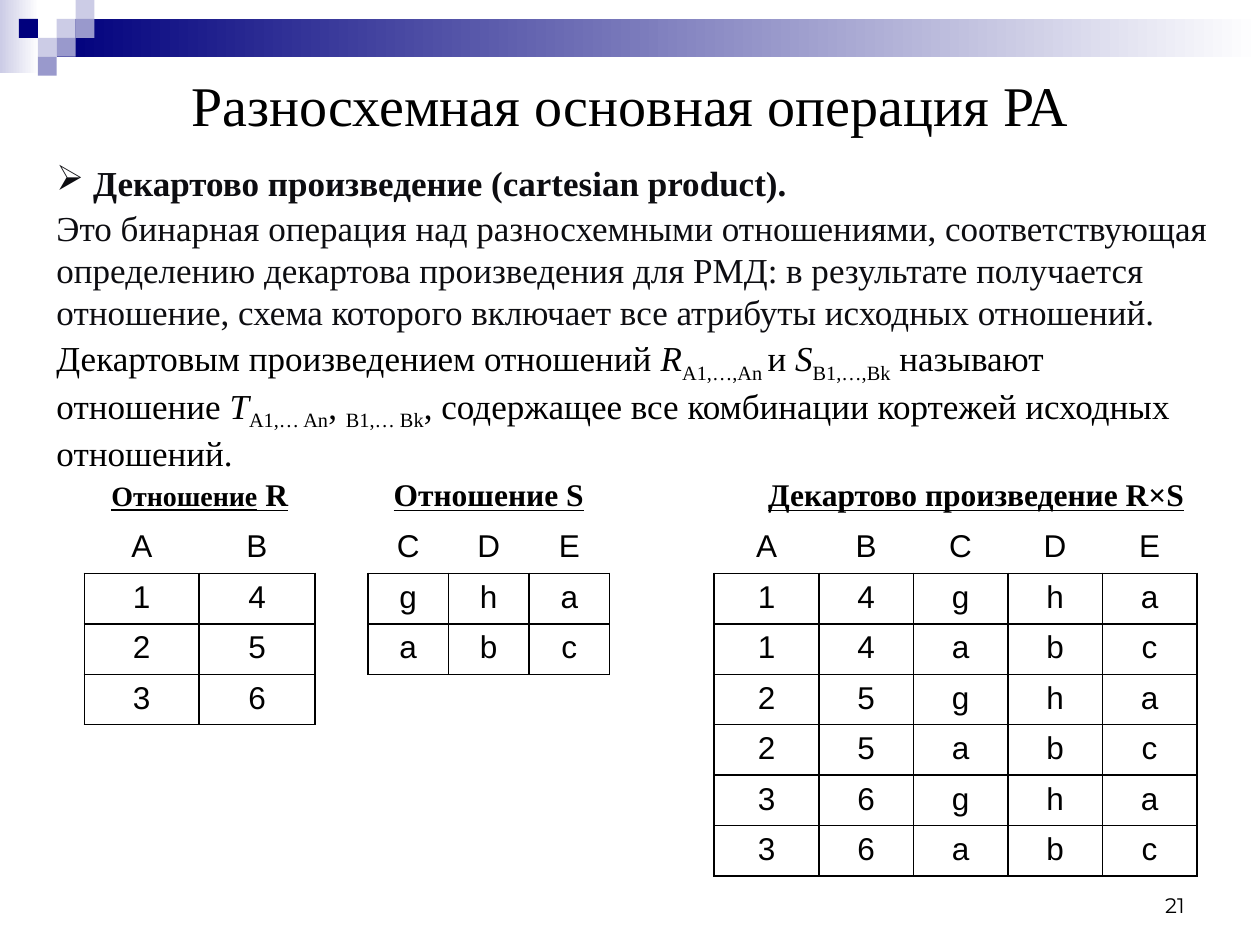
"""Builds the slide about the Cartesian product of two relations."""
from dataclasses import dataclass
from itertools import product
from typing import NamedTuple

import lxml.etree
import pptx
import pptx.dml.color
import pptx.enum.shapes
import pptx.enum.text
import pptx.oxml
import pptx.oxml.ns
import pptx.util

WIDTH, HEIGHT = pptx.util.Inches(10), pptx.util.Inches(7.5)
SERIF, SANS = "Times New Roman", "Arial"
BLACK, INK = "000000", "0D0D11"
NAVY, MIDDLE, LIGHT, WHITE = "00007D", "9999CC", "CCCCE6", "FFFFFF"
ALIGN = pptx.enum.text.PP_ALIGN


class Area(NamedTuple):
    """A rectangle in percent of the slide's width and height."""
    left: float
    top: float
    width: float
    height: float

    def lengths(self) -> tuple:
        return (int(WIDTH * self.left / 100), int(HEIGHT * self.top / 100),
                int(WIDTH * self.width / 100), int(HEIGHT * self.height / 100))


class Span(NamedTuple):
    text: str
    italic: bool = False
    subscript: bool = False
    size: float | None = None


@dataclass
class Block:
    """A rectangle of the header ornament; two colours make a gradient."""
    area: Area
    colors: tuple


@dataclass
class Relation:
    title: list
    title_columns: tuple
    title_align: object
    columns: tuple
    names: str
    rows: list


TILE_WIDTH, TILE_HEIGHT = 1.5, 2
TILES = [(3, 1, LIGHT), (4, 0, LIGHT), (4, 1, MIDDLE), (2, 2, LIGHT),
         (1, 1, NAVY), (3, 2, MIDDLE), (2, 3, MIDDLE)]
BLOCKS = [Block(Area(0, 0, 3.1, 7.73), (LIGHT, WHITE)),
          Block(Area(4.5, 2, 95.5, 4), (NAVY, WHITE))]
BLOCKS += [Block(Area(column * TILE_WIDTH, row * TILE_HEIGHT, TILE_WIDTH, TILE_HEIGHT), (color,))
           for column, row, color in TILES]

HEADING = [Span(" Декартово произведение (cartesian product).")]
SUMMARY = [Span("Это бинарная операция над разносхемными отношениями, соответствующая "
                "определению декартова произведения для РМД: в результате получается отношение, "
                "схема которого включает все атрибуты исходных отношений.")]
DEFINITION = [
    Span("Декартовым произведением отношений "),
    Span("R", italic=True), Span("A1,…,An ", subscript=True), Span("и "),
    Span("S", italic=True), Span("B1,…,Bk", subscript=True), Span(" называют отношение "),
    Span("T", italic=True), Span("A1,… An", subscript=True), Span(", "),
    Span("B1,… Bk", subscript=True),
    Span(", содержащее все комбинации кортежей исходных отношений."),
]

R_ROWS, S_ROWS = ["14", "25", "36"], ["gha", "abc"]
RELATIONS = [
    Relation([Span("Отношение", size=16), Span(" R")], (0, 1), ALIGN.CENTER,
             (0, 1), "AB", R_ROWS),
    Relation([Span("Отношение S")], (3, 5), ALIGN.CENTER, (3, 4, 5), "CDE", S_ROWS),
    Relation([Span("Декартово произведение R×S")], (8, 12), ALIGN.RIGHT,
             (7, 9, 10, 11, 12), "ABCDE", [r + s for r, s in product(R_ROWS, S_ROWS)]),
]
COLUMN_WIDTHS = [9.1, 9.2, 4.2, 6.4, 6.4, 6.4, 8.3, 3, 5.3, 7.5, 7.5, 7.5, 7.5]
ROW_COUNT, ROW_HEIGHT = 8, 5.33
SPLIT_COLUMN = 7


def rgb(color: str):
    return pptx.dml.color.RGBColor.from_string(color)


def draw_block(page, block: Block) -> None:
    shape = page.shapes.add_shape(pptx.enum.shapes.MSO_SHAPE.RECTANGLE, *block.area.lengths())
    shape.shadow.inherit = False
    shape.line.fill.background()
    if len(block.colors) == 1:
        shape.fill.solid()
        shape.fill.fore_color.rgb = rgb(block.colors[0])
        return
    shape.fill.gradient()
    shape.fill.gradient_angle = 0
    for stop, position, color in zip(shape.fill.gradient_stops, (0, 1), block.colors):
        stop.position = position
        stop.color.rgb = rgb(color)


def write(para, spans: list, size: float, font: str = SERIF, color: str = BLACK,
          align=ALIGN.LEFT, bold: bool = False, underline: bool = False) -> None:
    """Fills a paragraph with spans that share one font."""
    para.alignment = align
    para.font.size, para.font.name = pptx.util.Pt(size), font
    para.font.bold, para.font.underline = bold, underline
    para.font.color.rgb = rgb(color)
    for span in spans:
        run = para.add_run()
        run.text = span.text
        if span.italic:
            run.font.italic = True
        if span.size:
            run.font.size = pptx.util.Pt(span.size)
        if span.subscript:
            run._r.get_or_add_rPr().set("baseline", "-25000")


def add_box(page, area: Area):
    frame = page.shapes.add_textbox(*area.lengths()).text_frame
    frame.word_wrap = True
    return frame


def draw_body(page) -> None:
    frame = add_box(page, Area(3.5, 16.4, 93.7, 33.6))
    heading = frame.paragraphs[0]
    write(heading, HEADING, 20, color=INK, bold=True)
    bullet = lxml.etree.Element(pptx.oxml.ns.qn("a:buChar"), char="➢")
    heading._p.get_or_add_pPr().insert(0, bullet)
    for spans, color in ((SUMMARY, INK), (DEFINITION, BLACK)):
        para = frame.add_paragraph()
        write(para, spans, 20, color=color)
        para.space_before = pptx.util.Pt(2)


def set_borders(cell, sides: dict) -> None:
    """Draws or hides the left, right, top and bottom border of a cell."""
    properties = cell._tc.get_or_add_tcPr()
    for index, (side, shown) in enumerate(sides.items()):
        paint = f'<a:solidFill><a:srgbClr val="{BLACK}"/></a:solidFill>' if shown else "<a:noFill/>"
        properties.insert(index, pptx.oxml.parse_xml(
            f'<a:ln{side} {pptx.oxml.ns.nsdecls("a")} w="{pptx.util.Pt(1)}">{paint}</a:ln{side}>'))


def draw_relations(page) -> None:
    area = Area(6.7, 50, sum(COLUMN_WIDTHS), ROW_COUNT * ROW_HEIGHT)
    table = page.shapes.add_table(ROW_COUNT, len(COLUMN_WIDTHS), *area.lengths()).table
    table.first_row = table.horz_banding = False
    for column, width in zip(table.columns, COLUMN_WIDTHS):
        column.width = int(WIDTH * width / 100)
    for row in table.rows:
        row.height = int(HEIGHT * ROW_HEIGHT / 100)

    framed = set()
    for relation in RELATIONS:
        first, last = relation.title_columns
        table.cell(0, first).merge(table.cell(0, last))
        write(table.cell(0, first).text_frame.paragraphs[0], relation.title, 18,
              align=relation.title_align, bold=True, underline=True)
        for row, values in enumerate([relation.names, *relation.rows], start=1):
            for column, value in zip(relation.columns, values):
                write(table.cell(row, column).text_frame.paragraphs[0], [Span(value)], 18,
                      font=SANS, align=ALIGN.CENTER)
                if row > 1:
                    framed.add((row, column))
                    if column == SPLIT_COLUMN:
                        framed.add((row, column + 1))
    for row in range(1, ROW_COUNT):
        table.cell(row, SPLIT_COLUMN).merge(table.cell(row, SPLIT_COLUMN + 1))
    table.cell(0, 6).merge(table.cell(0, 7))

    for row, column in product(range(ROW_COUNT), range(len(COLUMN_WIDTHS))):
        cell = table.cell(row, column)
        cell.fill.background()
        neighbours = {"L": (row, column - 1), "R": (row, column + 1),
                      "T": (row - 1, column), "B": (row + 1, column)}
        set_borders(cell, {side: bool(framed & {(row, column), place})
                           for side, place in neighbours.items()})


def main() -> None:
    deck = pptx.Presentation()
    deck.slide_width, deck.slide_height = WIDTH, HEIGHT
    page = deck.slides.add_slide(deck.slide_layouts[5])
    for block in BLOCKS:
        draw_block(page, block)
    title = page.shapes.title
    title.left, title.top, title.width, title.height = Area(7.5, 4.8, 85, 10.4).lengths()
    title.text_frame.vertical_anchor = pptx.enum.text.MSO_ANCHOR.BOTTOM
    write(title.text_frame.paragraphs[0], [Span("Разносхемная основная операция РА")], 32,
          align=ALIGN.CENTER)
    draw_body(page)
    draw_relations(page)
    number = add_box(page, Area(71.7, 91.07, 23.3, 6.67))
    number.vertical_anchor = pptx.enum.text.MSO_ANCHOR.BOTTOM
    write(number.paragraphs[0], [Span("21")], 12, font="Montserrat", align=ALIGN.RIGHT)
    deck.save("out.pptx")


if __name__ == "__main__":
    main()
